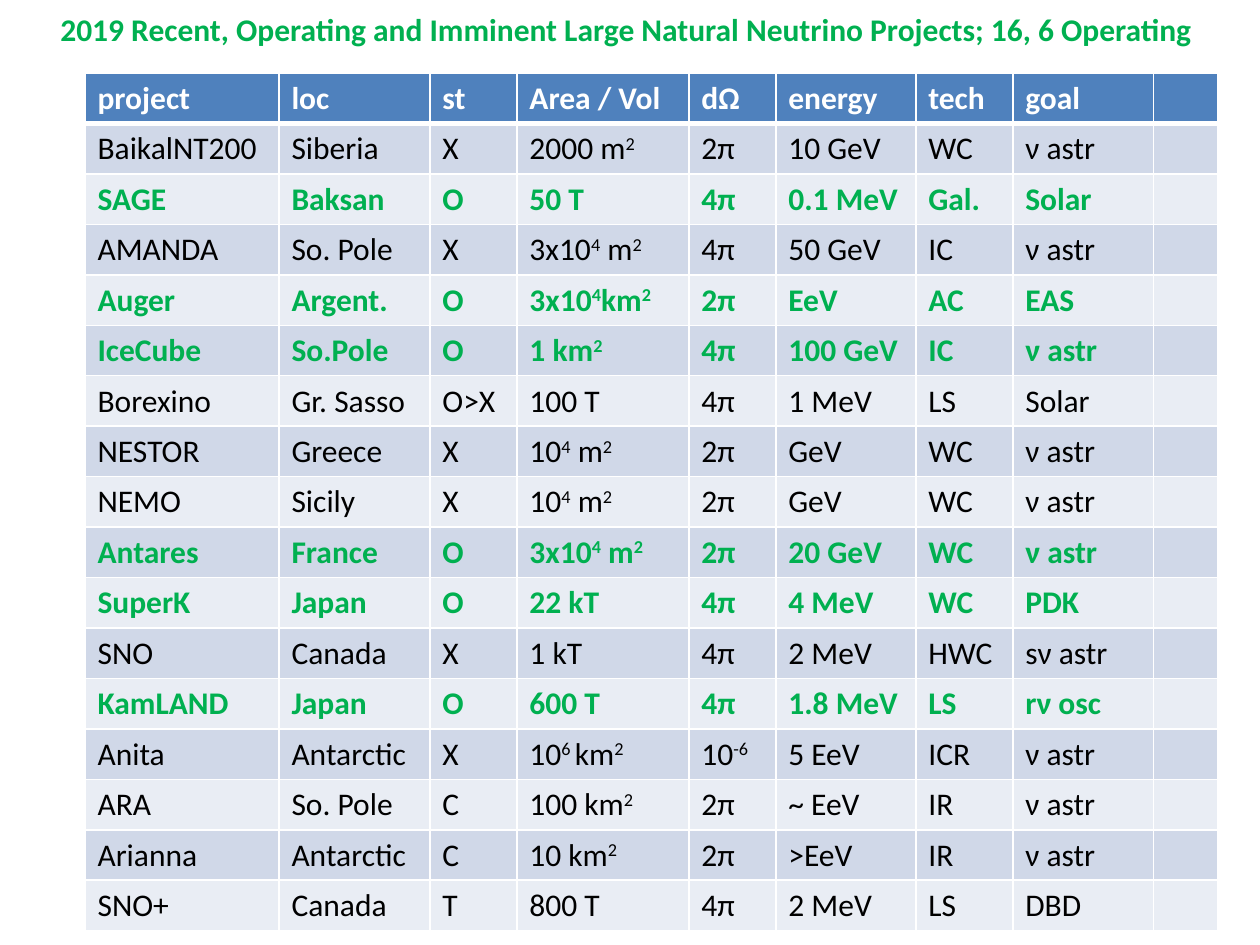
from dataclasses import dataclass

from lxml.etree import SubElement
from pptx import Presentation
from pptx.dml.color import RGBColor as RGB
from pptx.enum.text import MSO_AUTO_SIZE as AutoSize, PP_ALIGN as Align
from pptx.oxml.ns import qn
from pptx.util import Pt


@dataclass(frozen=True)
class Theme:
    font: str = "Calibri"
    size: int = 18
    operating: str = "00B050"
    plain: str = "000000"
    white: str = "FFFFFF"
    header: str = "4F81BD"
    bands: tuple = ("E9EDF4", "D0D8E8")
    rule: int = 1
    header_rule: int = 3


theme = Theme()
PX = 914400 / 126


def px(length):
    return round(length * PX)


def style(run, color, bold):
    run.font.name = theme.font
    run.font.size = Pt(theme.size)
    run.font.bold = bold
    run.font.color.rgb = RGB.from_string(color)


HEADINGS = ["project", "loc", "st", "Area / Vol", "dΩ", "energy", "tech", "goal", ""]
COLUMN_WIDTHS = [194, 151, 87, 172, 87, 140, 97, 141, 64]
ROW_HEIGHT = 50

# Text between carets is superscript.
PROJECTS = [
    ["BaikalNT200", "Siberia", "X", "2000 m^2^", "2π", "10 GeV", "WC", "ν astr", ""],
    ["SAGE", "Baksan", "O", "50 T", "4π", "0.1 MeV", "Gal.", "Solar", ""],
    ["AMANDA", "So. Pole", "X", "3x10^4^ m^2^", "4π", "50 GeV", "IC", "ν astr", ""],
    ["Auger", "Argent.", "O", "3x10^4^km^2^", "2π", "EeV", "AC", "EAS", ""],
    ["IceCube", "So.Pole", "O", "1 km^2^", "4π", "100 GeV", "IC", "ν astr", ""],
    ["Borexino", "Gr. Sasso", "O>X", "100 T", "4π", "1 MeV", "LS", "Solar", ""],
    ["NESTOR", "Greece", "X", "10^4^ m^2^", "2π", "GeV", "WC", "ν astr", ""],
    ["NEMO", "Sicily", "X", "10^4^ m^2^", "2π", "GeV", "WC", "ν astr", ""],
    ["Antares", "France", "O", "3x10^4^ m^2^", "2π", "20 GeV", "WC", "ν astr", ""],
    ["SuperK", "Japan", "O", "22 kT", "4π", "4 MeV", "WC", "PDK", ""],
    ["SNO", "Canada", "X", "1 kT", "4π", "2 MeV", "HWC", "sν astr", ""],
    ["KamLAND", "Japan", "O", "600 T", "4π", "1.8 MeV", "LS", "rν osc", ""],
    ["Anita", "Antarctic", "X", "10^6 ^km^2^", "10^-6^", "5 EeV", "ICR", "ν astr", ""],
    ["ARA", "So. Pole", "C", "100 km^2^", "2π", "~ EeV", "IR", "ν astr", ""],
    ["Arianna", "Antarctic", "C", "10 km^2^", "2π", ">EeV", "IR", "ν astr", ""],
    ["SNO+", "Canada", "T", "800 T", "4π", "2 MeV", "LS", "DBD", ""],
]

prs = Presentation()
prs.slide_width, prs.slide_height = px(1260), px(945)
slide = prs.slides.add_slide(prs.slide_layouts[6])

title = slide.shapes.add_textbox(0, px(4), px(1260), px(51)).text_frame
title.word_wrap = True
title.auto_size = AutoSize.SHAPE_TO_FIT_TEXT
title.text = "2019 Recent, Operating and Imminent Large Natural Neutrino Projects; 16, 6 Operating "
title.paragraphs[0].alignment = Align.CENTER
style(title.paragraphs[0].runs[0], theme.operating, True)

rows = [HEADINGS] + PROJECTS
table = slide.shapes.add_table(
    len(rows), len(HEADINGS), px(85), px(73),
    px(sum(COLUMN_WIDTHS)), px(ROW_HEIGHT * len(rows)),
).table
for column, width in zip(table.columns, COLUMN_WIDTHS):
    column.width = px(width)

for r, row in enumerate(rows):
    table.rows[r].height = px(ROW_HEIGHT)
    if r == 0:
        color, bold, band = theme.white, True, theme.header
    else:
        bold = row[2] == "O"
        color = theme.operating if bold else theme.plain
        band = theme.bands[r % 2]

    for c, entry in enumerate(row):
        cell = table.cell(r, c)
        borders = cell._tc.get_or_add_tcPr()
        for side in ("lnL", "lnR", "lnT", "lnB"):
            under_header = (r, side) in ((0, "lnB"), (1, "lnT"))
            weight = theme.header_rule if under_header else theme.rule
            line = SubElement(borders, qn(f"a:{side}"), w=str(Pt(weight)))
            SubElement(SubElement(line, qn("a:solidFill")), qn("a:srgbClr"), val=theme.white)
        cell.fill.solid()
        cell.fill.fore_color.rgb = RGB.from_string(band)

        paragraph = cell.text_frame.paragraphs[0]
        for i, piece in enumerate(entry.split("^")):
            if piece:
                run = paragraph.add_run()
                run.text = piece
                style(run, color, bold)
                if i % 2:
                    run._r.get_or_add_rPr().set("baseline", "30000")

prs.save("out.pptx")
